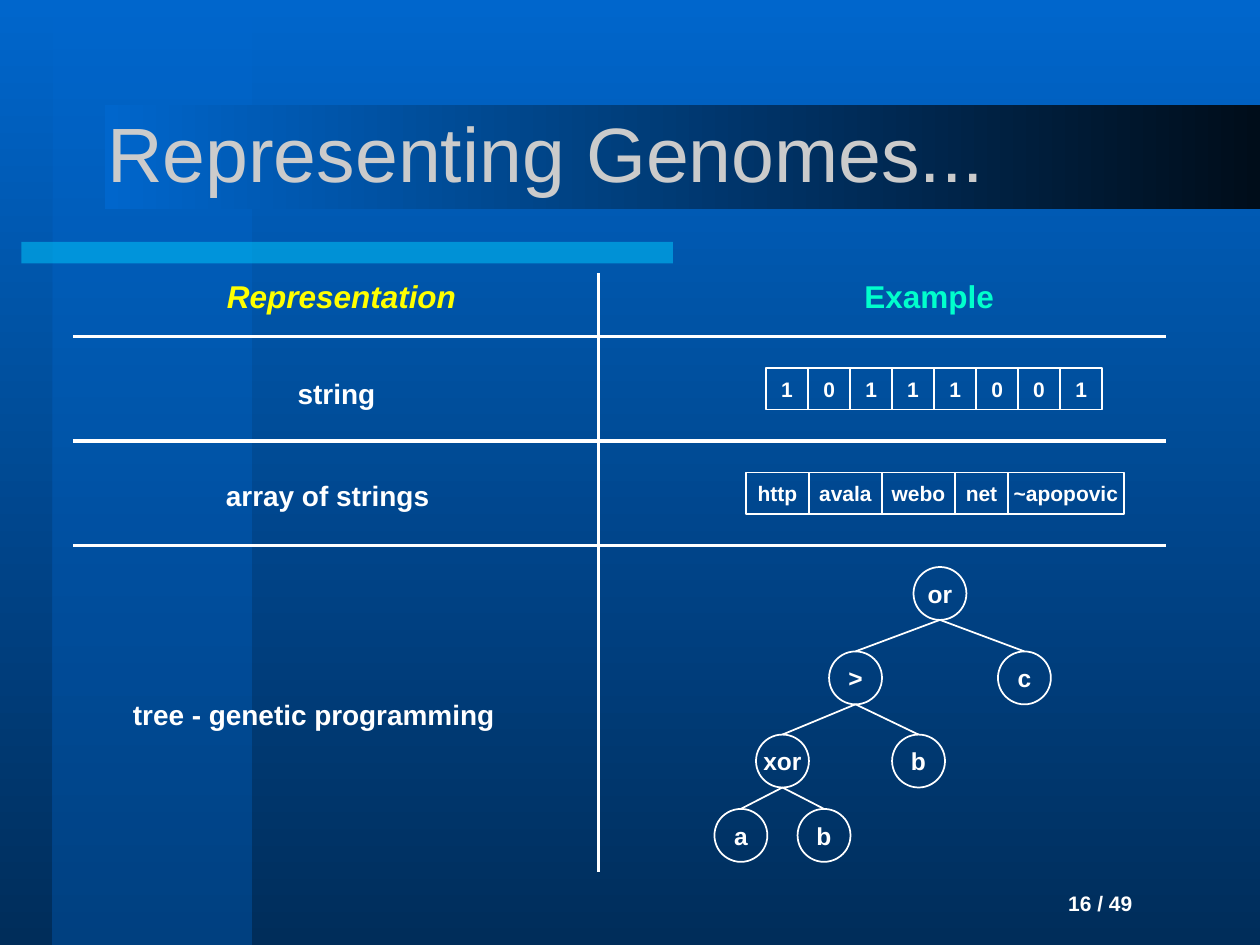
"""Build the slide on genome representations: string, array of strings and tree."""
from lxml import etree
from pptx import Presentation
from pptx.dml.color import RGBColor
from pptx.enum.shapes import MSO_CONNECTOR, MSO_SHAPE
from pptx.enum.text import MSO_ANCHOR, PP_ALIGN
from pptx.oxml.ns import qn
from pptx.util import Inches, Pt

STRAIGHT = MSO_CONNECTOR.STRAIGHT
RECTANGLE = MSO_SHAPE.RECTANGLE
OVAL = MSO_SHAPE.OVAL
MIDDLE = MSO_ANCHOR.MIDDLE
LEFT = PP_ALIGN.LEFT
CENTER = PP_ALIGN.CENTER

WHITE = RGBColor(0xFF, 0xFF, 0xFF)
YELLOW = RGBColor(0xFF, 0xFF, 0x00)
MINT = RGBColor(0x00, 0xFF, 0xCC)
SILVER = RGBColor(0xCB, 0xCB, 0xCB)
CYAN = RGBColor(0x00, 0xCC, 0xFF)
BLUE = RGBColor(0x00, 0x66, 0xCC)
MID_BLUE = RGBColor(0x00, 0x53, 0xA6)
NAVY = RGBColor(0x00, 0x2D, 0x5A)
NIGHT = RGBColor(0x00, 0x0D, 0x1A)

NODE_SIZE = 0.42
CELL_HEIGHT = 0.33


def add_line(start, end, width):
    line = slide.shapes.add_connector(STRAIGHT, *(Inches(value) for value in start + end))
    line.line.color.rgb = WHITE
    line.line.width = Pt(width)
    etree.SubElement(line.element.spPr, qn("a:effectLst"))
    return line


def write(shape, text, size, color=WHITE, bold=True, italic=False, align=CENTER):
    text_frame = shape.text_frame
    text_frame.text = text
    text_frame.word_wrap = False
    text_frame.vertical_anchor = MIDDLE
    paragraph = text_frame.paragraphs[0]
    paragraph.alignment = align
    font = paragraph.runs[0].font
    font.name = "Arial"
    font.size = Pt(size)
    font.bold = bold
    font.italic = italic
    font.color.rgb = color


presentation = Presentation()
presentation.slide_width = Inches(10)
presentation.slide_height = Inches(7.5)
slide = presentation.slides.add_slide(presentation.slide_layouts[5])

panels = []
for box in [(0.42, 0, 1.58, 7.5), (0.17, 1.92, 5.17, 0.17), (0.83, 0.83, 9.17, 0.83)]:
    panel = slide.shapes.add_shape(RECTANGLE, *(Inches(value) for value in box))
    panel.shadow.inherit = False
    panel.line.fill.background()
    panels.append(panel)
side_band, accent_bar, title_bar = panels

for fill, first, last, angle in [
    (slide.background.fill, BLUE, NAVY, 270),
    (side_band.fill, BLUE, MID_BLUE, 270),
    (title_bar.fill, BLUE, NIGHT, 0),
]:
    fill.gradient()
    fill.gradient_angle = angle
    for stop, color in zip(fill.gradient_stops, (first, last)):
        stop.color.rgb = color

accent_bar.fill.solid()
accent_bar.fill.fore_color.rgb = CYAN
for panel in (side_band, accent_bar):
    for color in panel.element.spPr.iter(qn("a:srgbClr")):
        etree.SubElement(color, qn("a:alpha"), val="50000")

title = slide.shapes.title
title.left, title.top = Inches(0.75), Inches(0.58)
title.width, title.height = Inches(8.5), Inches(1.25)
write(title, "Representing Genomes...", 44, SILVER, bold=False, align=LEFT)
title.text_frame.word_wrap = True
slide.shapes._spTree.append(title.element)

page_number = slide.shapes.add_textbox(Inches(8.38), Inches(6.92), Inches(1.5), Inches(0.5))
write(page_number, "16 / 49", 12, align=LEFT)
page_number.text_frame.word_wrap = True

add_line((4.75, 2.17), (4.75, 6.92), 2)
for top in (2.67, 3.5, 4.33):
    add_line((0.58, top), (9.25, top), 2)

for text, left, top, width, size, color, italic in [
    ("Representation", 1.7, 2.15, 2.02, 18, YELLOW, True),
    ("Example", 6.76, 2.15, 1.23, 18, MINT, False),
    ("string", 2.26, 2.92, 0.82, 16, WHITE, False),
    ("array of strings", 1.69, 3.73, 1.82, 16, WHITE, False),
    ("tree - genetic programming", 0.95, 5.47, 3.08, 16, WHITE, False),
]:
    label = slide.shapes.add_textbox(Inches(left), Inches(top), Inches(width), Inches(0.4))
    write(label, text, size, color, italic=italic)

bit_edges = [6.08 + index / 3 for index in range(9)]
for top, edges, values in [
    (2.92, bit_edges, "10111001"),
    (3.75, [5.92, 6.42, 7, 7.58, 8, 8.92], ["http", "avala", "webo", "net", "~apopovic"]),
]:
    genome = slide.shapes.add_shape(
        RECTANGLE, Inches(edges[0]), Inches(top), Inches(edges[-1] - edges[0]), Inches(CELL_HEIGHT)
    )
    genome.shadow.inherit = False
    genome.fill.background()
    genome.line.color.rgb = WHITE
    genome.line.width = Pt(1)
    write(genome, "".join(f"\t{value}" for value in values), 12, align=LEFT)
    text_frame = genome.text_frame
    text_frame.word_wrap = True
    text_frame.margin_left = text_frame.margin_right = 0
    properties = text_frame.paragraphs[0]._p.get_or_add_pPr()
    tab_list = etree.SubElement(properties, qn("a:tabLst"))
    for cell_left, cell_right in zip(edges, edges[1:]):
        center = Inches((cell_left + cell_right) / 2 - edges[0])
        etree.SubElement(tab_list, qn("a:tab"), pos=str(int(center)), algn="ctr")
    for edge in edges[1:-1]:
        add_line((edge, top), (edge, top + CELL_HEIGHT), 1)

tree = [
    ("or", 7.25, 4.5, None),
    (">", 6.58, 5.17, 0),
    ("c", 7.92, 5.17, 0),
    ("xor", 6, 5.83, 1),
    ("b", 7.08, 5.83, 1),
    ("a", 5.67, 6.42, 3),
    ("b", 6.33, 6.42, 3),
]
for text, left, top, parent in tree:
    node = slide.shapes.add_shape(
        OVAL, Inches(left), Inches(top), Inches(NODE_SIZE), Inches(NODE_SIZE)
    )
    node.shadow.inherit = False
    node.fill.background()
    node.line.color.rgb = WHITE
    node.line.width = Pt(1)
    write(node, text, 14)
    if parent is not None:
        parent_left, parent_top = tree[parent][1:3]
        branch = add_line(
            (parent_left + NODE_SIZE / 2, parent_top + NODE_SIZE), (left + NODE_SIZE / 2, top), 1
        )
        branch.end_connect(node, 0)

presentation.save("out.pptx")
